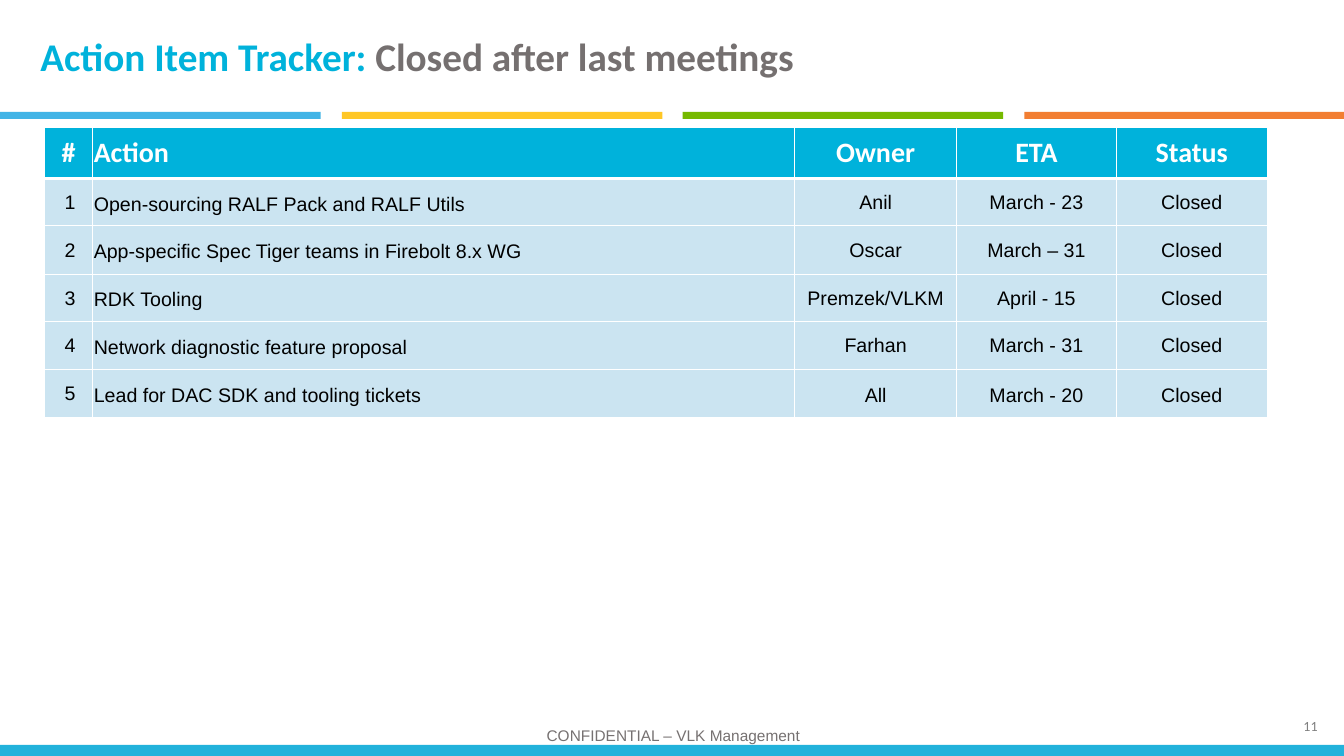
"""Build the action item tracker slide."""
from dataclasses import dataclass

from lxml.etree import SubElement
from pptx import Presentation
from pptx.dml.color import RGBColor
from pptx.enum.shapes import MSO_SHAPE
from pptx.enum.text import MSO_ANCHOR, MSO_AUTO_SIZE, PP_ALIGN
from pptx.oxml.ns import qn
from pptx.slide import Slide
from pptx.table import _Cell
from pptx.text.text import _Paragraph
from pptx.util import Emu, Pt

EMU_PER_PX = 9144


@dataclass(frozen=True)
class Theme:
    heading_font: str = "Calibri"
    body_font: str = "Arial"
    accent: str = "00B2DB"
    title_gray: str = "757070"
    footer_gray: str = "767171"
    number_gray: str = "808080"
    bottom_bar: str = "22B2DB"
    row_fill: str = "CBE4F1"
    white: str = "FFFFFF"
    black: str = "000000"
    stripes: tuple[str, ...] = ("42B4E6", "FFC726", "76B900", "F27E32")
    title_size: int = 28
    header_size: int = 20
    body_size: int = 14
    footer_size: int = 11
    number_size: int = 10


@dataclass(frozen=True)
class Box:
    left: int
    top: int
    width: int
    height: int

    def emu(self) -> tuple[Emu, Emu, Emu, Emu]:
        return px(self.left), px(self.top), px(self.width), px(self.height)


@dataclass(frozen=True)
class TextStyle:
    font: str
    size: int
    color: str
    bold: bool = False


@dataclass(frozen=True)
class Column:
    heading: str
    width: int
    heading_align: PP_ALIGN = PP_ALIGN.CENTER
    body_align: PP_ALIGN = PP_ALIGN.CENTER
    body_inset: int = 1
    spaced: bool = False


@dataclass(frozen=True)
class Action:
    name: str
    owner: str
    due: str
    status: str = "Closed"
    spaced: bool = False


THEME = Theme()
HEADER_STYLE = TextStyle(THEME.heading_font, THEME.header_size, THEME.white, True)
BODY_STYLE = TextStyle(THEME.body_font, THEME.body_size, THEME.black)

COLUMNS = (
    Column("#", 48, body_align=PP_ALIGN.LEFT, body_inset=20),
    Column("Action", 696, PP_ALIGN.LEFT, PP_ALIGN.LEFT, spaced=True),
    Column("Owner", 161),
    Column("ETA", 158),
    Column("Status", 150),
)
ACTIONS = (
    Action("Open-sourcing RALF Pack and RALF Utils", "Anil", "March - 23"),
    Action("App-specific Spec Tiger teams in Firebolt 8.x WG", "Oscar", "March – 31"),
    Action("RDK Tooling", "Premzek/VLKM", "April - 15"),
    Action("Network diagnostic feature proposal", "Farhan", "March - 31"),
    Action("Lead for DAC SDK and tooling tickets", "All", "March - 20", spaced=True),
)


def px(length: int) -> Emu:
    return Emu(length * EMU_PER_PX)


def add_span(para: _Paragraph, text: str, style: TextStyle) -> None:
    span = para.add_run()
    span.text = text
    span.font.name = style.font
    span.font.size = Pt(style.size)
    span.font.bold = style.bold
    span.font.color.rgb = RGBColor.from_string(style.color)


def add_bar(page: Slide, box: Box, color: str) -> None:
    bar = page.shapes.add_shape(MSO_SHAPE.RECTANGLE, *box.emu())
    bar.shadow.inherit = False
    bar.fill.solid()
    bar.fill.fore_color.rgb = RGBColor.from_string(color)
    bar.line.fill.background()


def add_label(page: Slide, box: Box, text: str, style: TextStyle) -> _Paragraph:
    frame = page.shapes.add_textbox(*box.emu()).text_frame
    frame.word_wrap = True
    para = frame.paragraphs[0]
    add_span(para, text, style)
    return para


def add_title(page: Slide) -> None:
    title = page.shapes.title
    title.left, title.top, title.width, title.height = Box(30, 7, 1252, 96).emu()
    frame = title.text_frame
    frame.vertical_anchor = MSO_ANCHOR.MIDDLE
    para = frame.paragraphs[0]
    para.alignment = PP_ALIGN.LEFT
    for text, color in (
        ("Action Item Tracker: ", THEME.accent),
        ("Closed after last meetings", THEME.title_gray),
    ):
        add_span(para, text, TextStyle(THEME.heading_font, THEME.title_size, color, True))


def add_footer(page: Slide) -> None:
    add_bar(page, Box(0, 739, 1333, 11), THEME.bottom_bar)
    number_style = TextStyle(THEME.heading_font, THEME.number_size, THEME.number_gray)
    number = add_label(page, Box(1283, 707, 37, 27), "11", number_style)
    number.alignment = PP_ALIGN.LEFT
    frame = page.shapes[-1].text_frame
    frame.word_wrap = False
    frame.auto_size = MSO_AUTO_SIZE.SHAPE_TO_FIT_TEXT
    notice_style = TextStyle(THEME.body_font, THEME.footer_size, THEME.footer_gray)
    notice = add_label(page, Box(446, 719, 444, 25), "CONFIDENTIAL – VLK Management", notice_style)
    notice.alignment = PP_ALIGN.CENTER
    notice.line_spacing = 0.8
    page.shapes[-1].text_frame.vertical_anchor = MSO_ANCHOR.MIDDLE


def set_borders(cell: _Cell, top: int, bottom: int) -> None:
    properties = cell._tc.get_or_add_tcPr()
    for side, points in (("L", 1), ("R", 1), ("T", top), ("B", bottom)):
        line = SubElement(properties, qn(f"a:ln{side}"), w=str(Pt(points)))
        fill = SubElement(line, qn("a:solidFill"))
        SubElement(fill, qn("a:srgbClr"), val=THEME.white)


def fill_cell(cell: _Cell, text: str, column: Column, row: int, spaced: bool) -> None:
    header = row == 0
    set_borders(cell, top=3 if row == 1 else 1, bottom=3 if header else 1)
    cell.fill.solid()
    cell.fill.fore_color.rgb = RGBColor.from_string(THEME.accent if header else THEME.row_fill)
    cell.vertical_anchor = MSO_ANCHOR.MIDDLE
    cell.margin_left = px(1 if header else column.body_inset)
    cell.margin_right = cell.margin_top = px(1)
    cell.margin_bottom = px(0)
    para = cell.text_frame.paragraphs[0]
    para.alignment = column.heading_align if header else column.body_align
    if spaced:
        para.line_spacing = 1.15
        para.space_after = Pt(8)
    add_span(para, text, HEADER_STYLE if header else BODY_STYLE)


def add_tracker(page: Slide) -> None:
    frame = page.shapes.add_table(len(ACTIONS) + 1, len(COLUMNS), *Box(44, 126, 1213, 288).emu())
    table = frame.table
    table.horz_banding = False
    table.rows[0].height = px(51)
    for index, column in enumerate(COLUMNS):
        table.columns[index].width = px(column.width)
        fill_cell(table.cell(0, index), column.heading, column, 0, False)
    for row, action in enumerate(ACTIONS, start=1):
        table.rows[row].height = px(47 if row % 2 else 48)
        values = (str(row), action.name, action.owner, action.due, action.status)
        for index, (column, value) in enumerate(zip(COLUMNS, values)):
            spaced = column.spaced or (action.spaced and index > 0)
            fill_cell(table.cell(row, index), value, column, row, spaced)


def main() -> None:
    deck = Presentation()
    deck.slide_width, deck.slide_height = px(1333), px(750)
    page = deck.slides.add_slide(deck.slide_layouts[5])
    add_footer(page)
    for index, color in enumerate(THEME.stripes):
        add_bar(page, Box(round(index * 1016 / 3), 111, 318, 7), color)
    add_title(page)
    add_tracker(page)
    deck.save("out.pptx")


if __name__ == "__main__":
    main()
